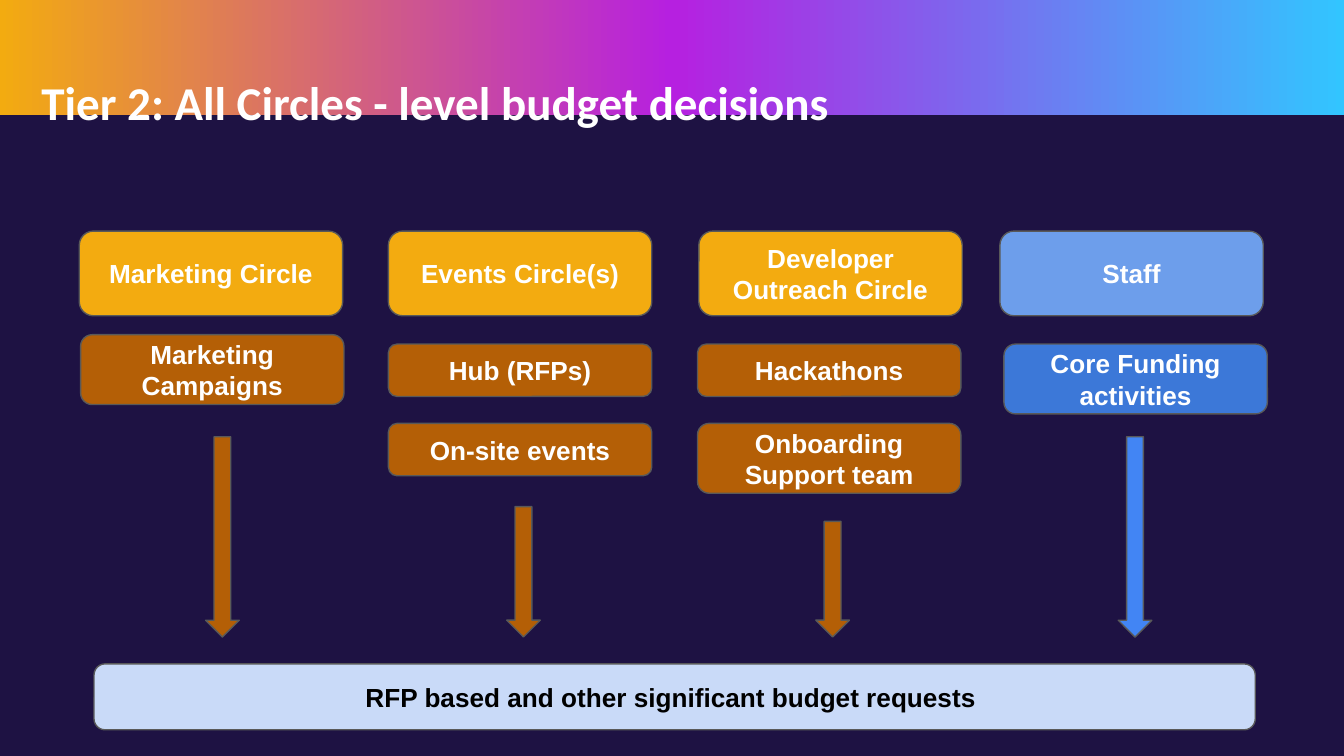
from copy import deepcopy

from pptx import Presentation
from pptx import util as u
from pptx.dml.color import RGBColor
from pptx.enum import shapes, text
from pptx.oxml.ns import qn

TITLE = "Tier 2: All Circles - level budget decisions"
FOOTER = "RFP based and other significant budget requests "
GRADIENT = [(0, "F3AB10"), (0.5, "B620E0"), (1, "32C5FF")]
GOLD, BROWN, WHITE = "F3AB10", "B45F06", "FFFFFF"
ONE_LINE, TWO_LINES = 0.39, 0.52

COLUMNS = [
    dict(head="Marketing Circle", left=0.59, fill=GOLD, item_left=0.6,
         item_fill=BROWN, items=[("Marketing Campaigns", 2.49, TWO_LINES)],
         arrow=(1.53, 3.25, BROWN)),
    dict(head="Events Circle(s)", left=2.89, fill=GOLD, item_left=2.89,
         item_fill=BROWN, items=[("Hub (RFPs)", 2.56, ONE_LINE),
                                 ("On-site events", 3.15, ONE_LINE)],
         arrow=(3.77, 3.77, BROWN)),
    dict(head="Developer Outreach Circle", left=5.2, fill=GOLD, item_left=5.19,
         item_fill=BROWN, items=[("Hackathons", 2.56, ONE_LINE),
                                 ("Onboarding Support team", 3.15, TWO_LINES)],
         arrow=(6.07, 3.88, BROWN)),
    dict(head="Staff", left=7.44, fill="6D9EEB", item_left=7.47,
         item_fill="3C78D8", items=[("Core Funding activities", 2.56, TWO_LINES)],
         arrow=(8.32, 3.25, "4285F4")),
]
SLIDE_W = 10
SLIDE_H = SLIDE_W * 9 / 16
BOX_W, HEAD_TOP, HEAD_H = 1.96, 1.72, 0.63
ARROW_W, ARROW_END = 0.25, 4.74


def rgb(value):
    return RGBColor.from_string(value)


def inches(*values):
    return [u.Inches(v) for v in values]


def add_shape(kind, left, top, width, height, fill):
    sp = s.shapes.add_shape(kind, *inches(left, top, width, height))
    sp.shadow.inherit = False
    sp.fill.solid()
    sp.fill.fore_color.rgb = rgb(fill)
    sp.line.color.rgb = rgb("595959")
    sp.line.width = u.Pt(0.75)
    return sp


def write(sp, words, font, size, color):
    tf = sp.text_frame
    tf.word_wrap = True
    tf.margin_left = tf.margin_right = tf.margin_top = tf.margin_bottom = u.Inches(0.1)
    p = tf.paragraphs[0]
    p.text = words
    p.font.name, p.font.size, p.font.bold = font, u.Pt(size), True
    p.font.color.rgb = rgb(color)
    return tf, p


def add_box(words, left, top, width, height, fill, color=WHITE):
    sp = add_shape(shapes.MSO_SHAPE.ROUNDED_RECTANGLE, left, top, width, height, fill)
    tf, p = write(sp, words, "Arial", 14, color)
    tf.vertical_anchor = text.MSO_ANCHOR.MIDDLE
    p.alignment = text.PP_ALIGN.CENTER


def add_banner():
    sp = s.shapes.add_shape(shapes.MSO_SHAPE.RECTANGLE, *inches(0, 0, SLIDE_W, 0.86))
    sp.shadow.inherit = False
    sp.line.fill.background()
    sp.fill.gradient()
    sp.fill.gradient_angle = 0
    stops = sp._element.spPr.find(".//" + qn("a:gsLst"))
    stops.append(deepcopy(stops[0]))
    for stop, (position, color) in zip(sp.fill.gradient_stops, GRADIENT):
        stop.position = position
        stop.color.rgb = rgb(color)


prs = Presentation()
prs.slide_width, prs.slide_height = inches(SLIDE_W, SLIDE_H)
s = prs.slides.add_slide(prs.slide_layouts[6])
s.background.fill.solid()
s.background.fill.fore_color.rgb = rgb("1E1243")

add_banner()
title = s.shapes.add_textbox(*inches(0.21, 0.24, 9.32, 0.63))
tf, p = write(title, TITLE, "Calibri", 25.2, WHITE)
p.line_spacing = 1.5

for col in COLUMNS:
    add_box(col["head"], col["left"], HEAD_TOP, BOX_W, HEAD_H, col["fill"])
    for words, top, height in col["items"]:
        add_box(words, col["item_left"], top, BOX_W, height, col["item_fill"])
    left, top, fill = col["arrow"]
    add_shape(shapes.MSO_SHAPE.DOWN_ARROW, left, top, ARROW_W, ARROW_END - top, fill)

add_box(FOOTER, 0.7, 4.94, 8.64, 0.49, "C9DAF8", "000000")
prs.save("out.pptx")
